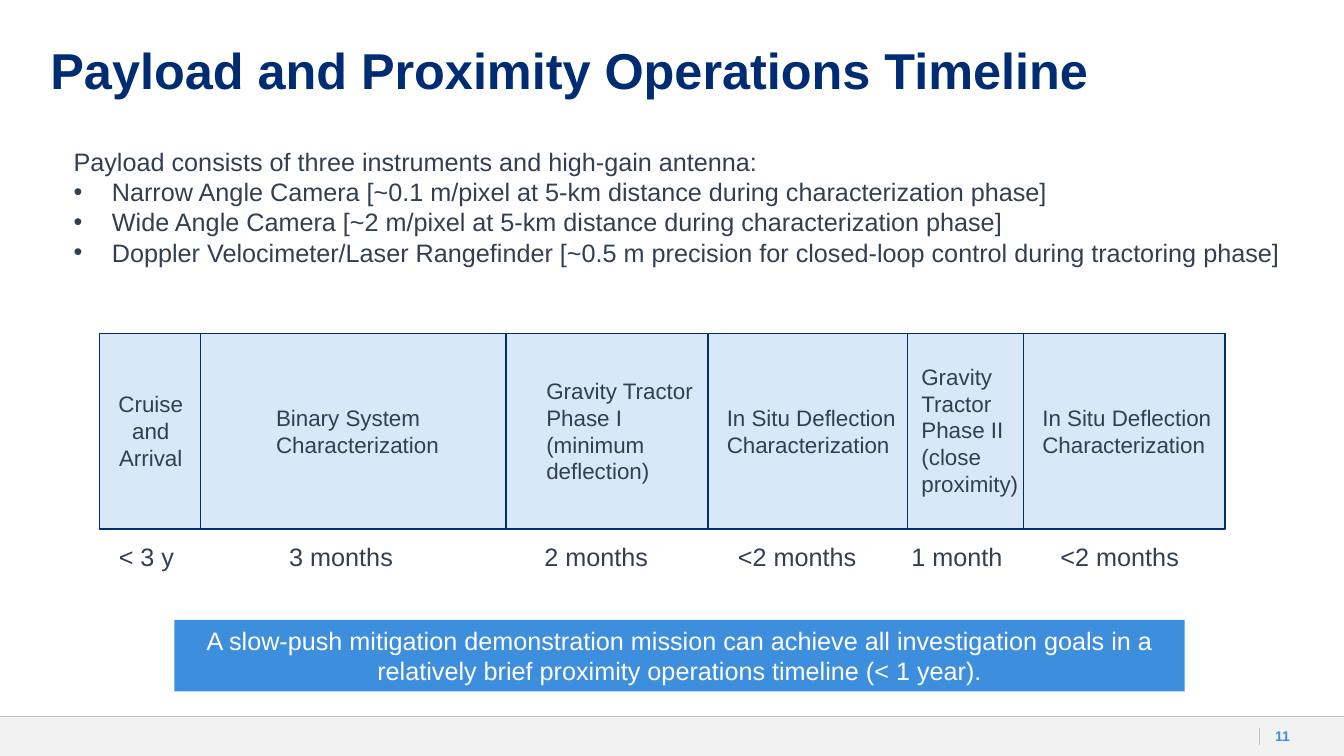
from dataclasses import dataclass
from itertools import pairwise

from lxml.etree import SubElement
from pptx import Presentation
from pptx.dml.color import RGBColor
from pptx.enum.shapes import MSO_CONNECTOR as Connector, MSO_SHAPE as Shape
from pptx.enum.text import MSO_ANCHOR as Anchor, MSO_AUTO_SIZE as AutoSize, PP_ALIGN as Align
from pptx.oxml.ns import qn
from pptx.util import Pt

EMU_PER_PX = 9144
SLIDE_W, SLIDE_H = 1333, 750


def px(*lengths):
    return [length * EMU_PER_PX for length in lengths]


@dataclass(frozen=True)
class Theme:
    font: str = "Arial"
    navy: str = "002C73"
    ink: str = "333F50"
    blue: str = "3E8EDE"
    pale: str = "D8E8F8"
    footer: str = "F2F2F2"
    rule: str = "BFBFBF"
    white: str = "FFFFFF"
    title_pt: int = 36
    body_pt: int = 18
    phase_pt: int = 16
    number_pt: int = 10


class TimelineSlide:
    def __init__(self, deck, theme):
        self.theme = theme
        self.slide = deck.slides.add_slide(deck.slide_layouts[1])

    def typeset(self, frame, text, size, color, bold=False, align=Align.LEFT,
                anchor=Anchor.TOP, wrap=True, inset=(10, 5)):
        frame.text = text
        frame.word_wrap = wrap
        frame.auto_size = AutoSize.NONE
        frame.vertical_anchor = anchor
        frame.margin_left = frame.margin_right = px(inset[0])[0]
        frame.margin_top = frame.margin_bottom = px(inset[1])[0]
        for paragraph in frame.paragraphs:
            paragraph.alignment = align
            paragraph.space_before = Pt(0)
            for run in paragraph.runs:
                run.font.name = self.theme.font
                run.font.size = Pt(size)
                run.font.bold = bold
                run.font.color.rgb = RGBColor.from_string(color)

    def place(self, holder, box):
        holder.left, holder.top, holder.width, holder.height = px(*box)
        return holder.text_frame

    def title(self, text, box):
        frame = self.place(self.slide.shapes.title, box)
        self.typeset(frame, text, self.theme.title_pt, self.theme.navy, bold=True, inset=(0, 0))
        frame.paragraphs[0].line_spacing = 0.9

    def bullets(self, lead, items, box, indent):
        frame = self.place(self.slide.placeholders[1], box)
        self.typeset(frame, "\n".join([lead, *items]), self.theme.body_pt, self.theme.ink)
        for position, paragraph in enumerate(frame.paragraphs):
            hang = px(indent)[0] if position else 0
            properties = paragraph._p.get_or_add_pPr()
            properties.set("marL", str(hang))
            properties.set("indent", str(-hang))
            if position:
                SubElement(properties, qn("a:buFont"), typeface=self.theme.font)
                SubElement(properties, qn("a:buChar"), char="•")
            else:
                SubElement(properties, qn("a:buNone"))

    def panel(self, box, fill, line=None):
        panel = self.slide.shapes.add_shape(Shape.RECTANGLE, *px(*box))
        panel.shadow.inherit = False
        panel.fill.solid()
        panel.fill.fore_color.rgb = RGBColor.from_string(fill)
        if line:
            panel.line.color.rgb = RGBColor.from_string(line)
            panel.line.width = Pt(1)
        else:
            panel.line.fill.background()
        return panel

    def rule(self, *ends):
        rule = self.slide.shapes.add_connector(Connector.STRAIGHT, *px(*ends))
        rule.line.color.rgb = RGBColor.from_string(self.theme.rule)
        rule.line.width = Pt(0.5)
        SubElement(rule._element.spPr, qn("a:effectLst"))

    def label(self, text, box, size, color, **style):
        label = self.slide.shapes.add_textbox(*px(*box))
        self.typeset(label.text_frame, text, size, color, **style)


PHASE_EDGES = [99, 199, 502, 702, 900, 1015, 1215]
BAR_TOP, BAR_HEIGHT = 331, 194
LINE_HEIGHT, LABEL_PADDING = 27, 10
DURATION_TOP, DURATION_HEIGHT = 532, 40
FOOTER_TOP, FOOTER_HEIGHT = 711, 39

PHASES = [
    ("Cruise and\nArrival", 105, 89, 3, Align.CENTER),
    ("Binary System Characterization", 264, 190, 2, Align.LEFT),
    ("Gravity Tractor Phase I\n(minimum deflection)", 532, 175, 4, Align.LEFT),
    ("In Situ Deflection Characterization", 711, 195, 2, Align.LEFT),
    ("Gravity Tractor Phase II\n(close proximity)", 904, 129, 5, Align.LEFT),
    ("In Situ Deflection Characterization", 1024, 193, 2, Align.LEFT),
]
DURATIONS = [
    ("< 3 y", 108, 76),
    ("3 months", 277, 131),
    ("2 months", 530, 131),
    ("<2 months", 722, 146),
    ("1 month", 894, 118),
    ("<2 months", 1042, 146),
]
INSTRUMENTS = [
    "Narrow Angle Camera [~0.1 m/pixel at 5-km distance during characterization phase]",
    "Wide Angle Camera [~2 m/pixel at 5-km distance during characterization phase]",
    "Doppler Velocimeter/Laser Rangefinder [~0.5 m precision for closed-loop control "
    "during tractoring phase]",
]
CONCLUSION = (
    "A slow-push mitigation demonstration mission can achieve all investigation goals in a "
    "relatively brief proximity operations timeline (< 1 year)."
)


def main():
    deck = Presentation()
    deck.slide_width, deck.slide_height = px(SLIDE_W, SLIDE_H)
    theme = Theme()
    page = TimelineSlide(deck, theme)

    page.panel((0, FOOTER_TOP, SLIDE_W, FOOTER_HEIGHT), theme.footer)
    page.rule(0, FOOTER_TOP, SLIDE_W, FOOTER_TOP)
    page.rule(1249, 722, 1249, 739)
    page.label("11", (1251, FOOTER_TOP, 42, FOOTER_HEIGHT), theme.number_pt, theme.blue,
               bold=True, align=Align.CENTER, anchor=Anchor.MIDDLE, inset=(0, 0))

    page.title("Payload and Proximity Operations Timeline", (50, 46, 1233, 83))
    page.bullets("Payload consists of three instruments and high-gain antenna:",
                 INSTRUMENTS, (63, 140, 1270, 162), indent=38)

    for left, right in pairwise(PHASE_EDGES):
        page.panel((left, BAR_TOP, right - left, BAR_HEIGHT), theme.pale, theme.navy)
    for phase, left, width, lines, align in PHASES:
        height = LABEL_PADDING + LINE_HEIGHT * lines
        top = BAR_TOP + (BAR_HEIGHT - height) // 2
        page.label(phase, (left, top, width, height), theme.phase_pt, theme.ink, align=align)
    for duration, left, width in DURATIONS:
        page.label(duration, (left, DURATION_TOP, width, DURATION_HEIGHT),
                   theme.body_pt, theme.ink, wrap=False)

    banner = page.panel((173, 615, 1002, 71), theme.blue)
    page.typeset(banner.text_frame, CONCLUSION, theme.body_pt, theme.white, align=Align.CENTER)

    deck.save("out.pptx")


if __name__ == "__main__":
    main()
